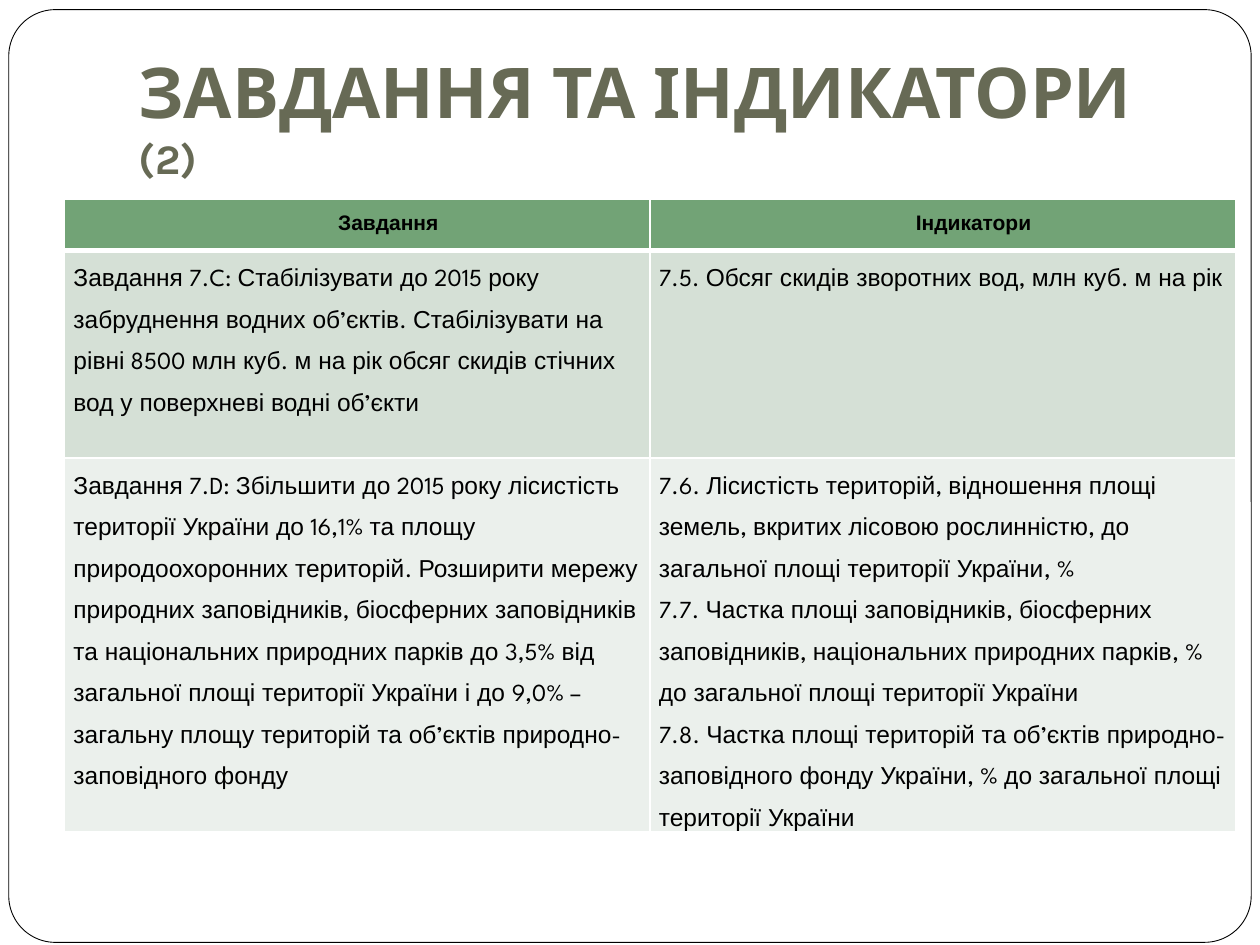
"""Build the slide of environmental tasks and indicators, part 2."""
from lxml import etree
from pptx import Presentation
from pptx import util as u
from pptx.dml.color import RGBColor
from pptx.enum import shapes, text
from pptx.oxml import ns

WHITE = RGBColor(0xFF, 0xFF, 0xFF)
BLACK = RGBColor(0, 0, 0)
OLIVE = RGBColor(0x67, 0x6A, 0x55)
ROW_FILLS = [RGBColor(0x72, 0xA3, 0x76), RGBColor(0xD5, 0xE0, 0xD6), RGBColor(0xEB, 0xF0, 0xEC)]
ROW_HEIGHTS = [29.2, 118.5, 213.5]
CELL_FONTS = ["Arial", "League Spartan"]

ROWS = [
    [["Завдання"], ["Індикатори"]],
    [
        ["Завдання| 7.C: |Стабілізувати до| 2015 |року забруднення водних об|’|єктів|. |"
         "Стабілізувати на рівні| 8500 |млн куб|. |"
         "м на рік обсяг скидів стічних вод у поверхневі водні об|’|єкти"],
        ["|7.5. |Обсяг скидів зворотних вод|, |млн куб|. |м на рік"],
    ],
    [
        ["Завдання| 7.D: |Збільшити до| 2015 |року лісистість території України до| 16,1% |"
         "та площу природоохоронних територій|. |Розширити мережу природних заповідників|, |"
         "біосферних заповідників та національних природних парків до| 3,5% |"
         "від загальної площі території України і до| 9,0% – |"
         "загальну площу територій та об|’|єктів природно|-|заповідного фонду"],
        ["|7.6. |Лісистість територій|, |відношення площі земель|, |"
         "вкритих лісовою рослинністю|, |до загальної площі території України|, %",
         "|7.7. |Частка площі заповідників|, |біосферних заповідників|, |"
         "національних природних парків|, % |до загальної площі території України",
         "|7.8. |Частка площі територій та об|’|єктів природно|-|"
         "заповідного фонду України|, % |до загальної площі території України"],
    ],
]


def add_span(para, words, font, size, color, bold):
    span = para.add_run()
    span.text = words
    span.font.name = font
    span.font.size = u.Pt(size)
    span.font.color.rgb = color
    span.font.bold = bold


def add_border(cell, side, width):
    properties = cell._tc.get_or_add_tcPr()
    line = etree.SubElement(properties, ns.qn(f"a:ln{side}"), w=str(u.Pt(width)))
    fill = etree.SubElement(line, ns.qn("a:solidFill"))
    etree.SubElement(fill, ns.qn("a:srgbClr"), val=str(WHITE))


deck = Presentation()
deck.slide_width, deck.slide_height = u.Pt(720), u.Pt(540)
page = deck.slides.add_slide(deck.slide_layouts[5])

frame = page.shapes.add_shape(
    shapes.MSO_SHAPE.ROUNDED_RECTANGLE, u.Pt(5), u.Pt(5.5), u.Pt(710), u.Pt(533))
frame.adjustments[0] = 0.05
frame.shadow.inherit = False
frame.fill.solid()
frame.fill.fore_color.rgb = WHITE
frame.line.color.rgb = BLACK
frame.line.width = u.Pt(0.5)

title = page.shapes.title
frame._element.addnext(title._element)
title.left, title.top, title.width, title.height = u.Pt(72), u.Pt(21.6), u.Pt(612), u.Pt(90)
box = title.text_frame
box.word_wrap = True
box.auto_size = text.MSO_AUTO_SIZE.NONE
box.vertical_anchor = text.MSO_ANCHOR.BOTTOM
box.margin_left = box.margin_right = box.margin_bottom = u.Pt(7.2)
box.margin_top = u.Pt(3.6)
para = box.paragraphs[0]
para.alignment = text.PP_ALIGN.LEFT
add_span(para, "ЗАВДАННЯ ТА ІНДИКАТОРИ ", "Karla", 40, OLIVE, True)
add_span(para, "(2)", "Karla", 24, OLIVE, True)

table = page.shapes.add_table(
    3, 2, u.Pt(37), u.Pt(114), u.Pt(669), u.Pt(sum(ROW_HEIGHTS))).table
for column in table.columns:
    column.width = u.Pt(334.5)

for row, (contents, height, color) in enumerate(zip(ROWS, ROW_HEIGHTS, ROW_FILLS)):
    table.rows[row].height = u.Pt(height)
    header = row == 0
    for col, paragraphs in enumerate(contents):
        cell = table.cell(row, col)
        cell.margin_left = cell.margin_right = u.Pt(5)
        cell.margin_top = cell.margin_bottom = u.Pt(0)
        widths = {"L": 1, "R": 1, "T": 3 if row == 1 else 1, "B": 3 if header else 1}
        for side, width in widths.items():
            add_border(cell, side, width)
        cell.fill.solid()
        cell.fill.fore_color.rgb = color
        for index, content in enumerate(paragraphs):
            box = cell.text_frame
            para = box.add_paragraph() if index else box.paragraphs[0]
            para.line_spacing = 1.5
            if header:
                para.alignment = text.PP_ALIGN.CENTER
                para._p.get_or_add_pPr().set("indent", str(u.Pt(35.3)))
            for part, words in enumerate(content.split("|")):
                if words:
                    add_span(para, words, CELL_FONTS[part % 2], 12 if header else 14, BLACK, header)

deck.save("out.pptx")
